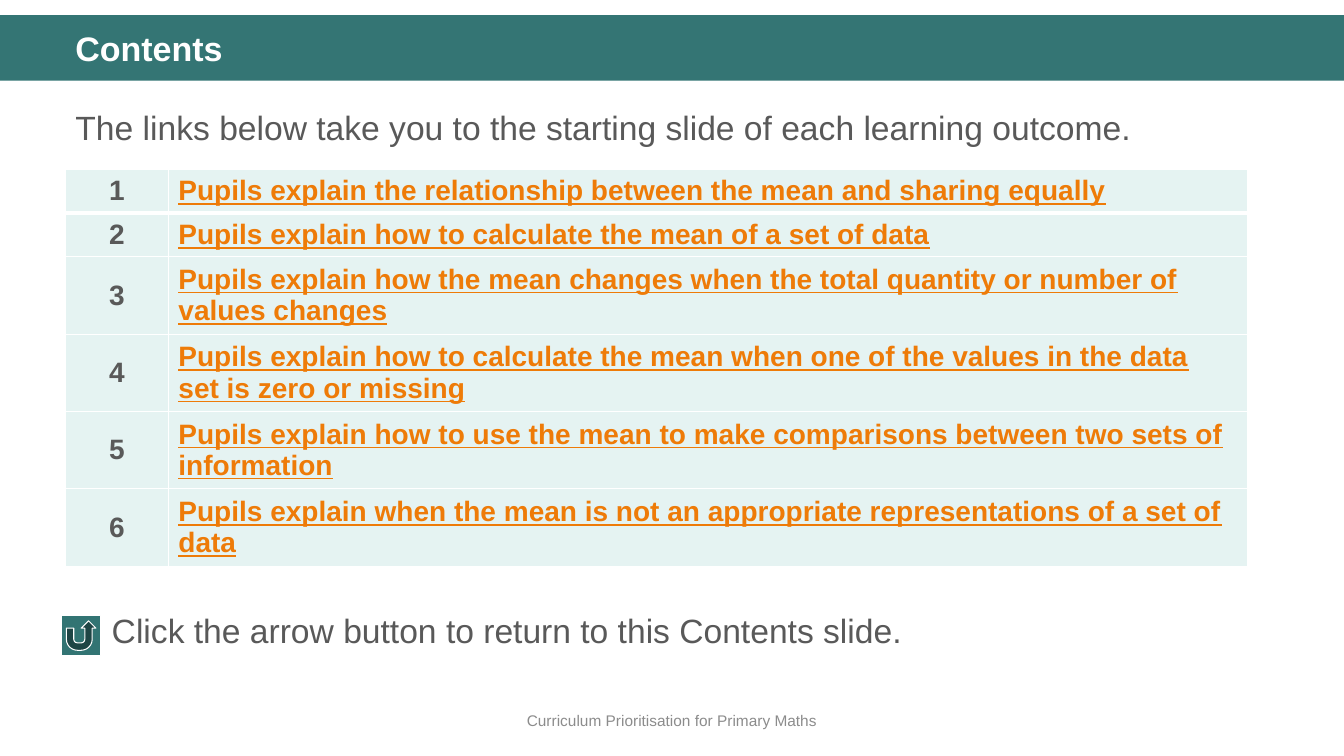
from lxml import etree
from pptx import Presentation
from pptx import util as u
from pptx.dml.color import RGBColor
from pptx.enum import shapes, text
from pptx.oxml import ns

WHITE, TEAL, GREY, ORANGE = "FFFFFF", "347574", "595959", "EE7B08"
OUTCOMES = [
    "Pupils explain the relationship between the mean and sharing equally",
    "Pupils explain how to calculate the mean of a set of data",
    "Pupils explain how the mean changes when the total quantity or number of values changes",
    "Pupils explain how to calculate the mean when one of the values in the data set is zero or missing",
    "Pupils explain how to use the mean to make comparisons between two sets of information",
    "Pupils explain when the mean is not an appropriate representations of a set of data",
]


def paint(target, color):
    if hasattr(target, "solid"):
        target.solid()
        target = target.fore_color
    target.rgb = RGBColor.from_string(color)


def write(frame, words, size, color, bold=False, align=text.PP_ALIGN.LEFT):
    frame.word_wrap = True
    paragraph = frame.paragraphs[0]
    paragraph.text = words
    paragraph.alignment = align
    font = paragraph.runs[0].font
    font.name, font.size, font.bold = "Arial", u.Pt(size), bold
    paint(font.color, color)
    return paragraph


presentation = Presentation()
presentation.slide_width, presentation.slide_height = u.Inches(13.33), u.Inches(7.5)
slide = presentation.slides.add_slide(presentation.slide_layouts[6])

band = slide.shapes.add_shape(
    shapes.MSO_SHAPE.RECTANGLE, 0, u.Inches(0.15), presentation.slide_width, u.Inches(0.65))
band.shadow.inherit = False
paint(band.fill, TEAL)
band.line.fill.background()

footer = slide.shapes.add_textbox(0, u.Inches(6.95), presentation.slide_width, u.Inches(0.4))
footer.text_frame.vertical_anchor = text.MSO_ANCHOR.MIDDLE
write(footer.text_frame, "Curriculum Prioritisation for Primary Maths", 11, "8C8C8C",
      align=text.PP_ALIGN.CENTER)

for left, top, width, height, words, size, color, bold, spacing in [
    (0.65, 0.27, 12.18, 0.47, "Contents", 24.3, WHITE, True, 0.9),
    (0.65, 0.93, 12.18, 0.6,
     "The links below take you to the starting slide of each learning outcome.",
     24, GREY, False, 1.2),
    (1.01, 6, 11.32, 0.5, "Click the arrow button to return to this Contents slide.",
     24, GREY, False, 1.0),
]:
    box = slide.shapes.add_textbox(*map(u.Inches, (left, top, width, height)))
    write(box.text_frame, words, size, color, bold).line_spacing = spacing

row_height = 0.41
table = slide.shapes.add_table(
    len(OUTCOMES), 2, u.Inches(0.65), u.Inches(1.68), u.Inches(11.72),
    u.Inches(row_height * len(OUTCOMES))).table
table.columns[0].width, table.columns[1].width = u.Inches(1.02), u.Inches(10.7)
for index, outcome in enumerate(OUTCOMES):
    table.rows[index].height = u.Inches(row_height)
    number_cell, outcome_cell = table.cell(index, 0), table.cell(index, 1)
    write(number_cell.text_frame, str(index + 1), 20, GREY, True, text.PP_ALIGN.CENTER)
    link = write(outcome_cell.text_frame, outcome, 20, ORANGE, True)
    link.runs[0].font.underline = True
    for cell in (number_cell, outcome_cell):
        cell.vertical_anchor = text.MSO_ANCHOR.MIDDLE
        properties = cell._tc.get_or_add_tcPr()
        for side in ("lnL", "lnR", "lnT", "lnB"):
            heavy = (index, side) in ((0, "lnB"), (1, "lnT"))
            border = etree.SubElement(
                properties, ns.qn(f"a:{side}"), w=str(u.Pt(3 if heavy else 1)))
            border_fill = etree.SubElement(border, ns.qn("a:solidFill"))
            etree.SubElement(border_fill, ns.qn("a:srgbClr"), val=WHITE)
        paint(cell.fill, "E5F3F2")

button = slide.shapes.add_shape(
    shapes.MSO_SHAPE.ACTION_BUTTON_RETURN,
    u.Inches(0.61), u.Inches(6.11), u.Inches(0.39), u.Inches(0.39))
button.shadow.inherit = False
paint(button.fill, "327473")
paint(button.line.color, WHITE)
button.line.width = u.Pt(0.75)

presentation.save("out.pptx")
